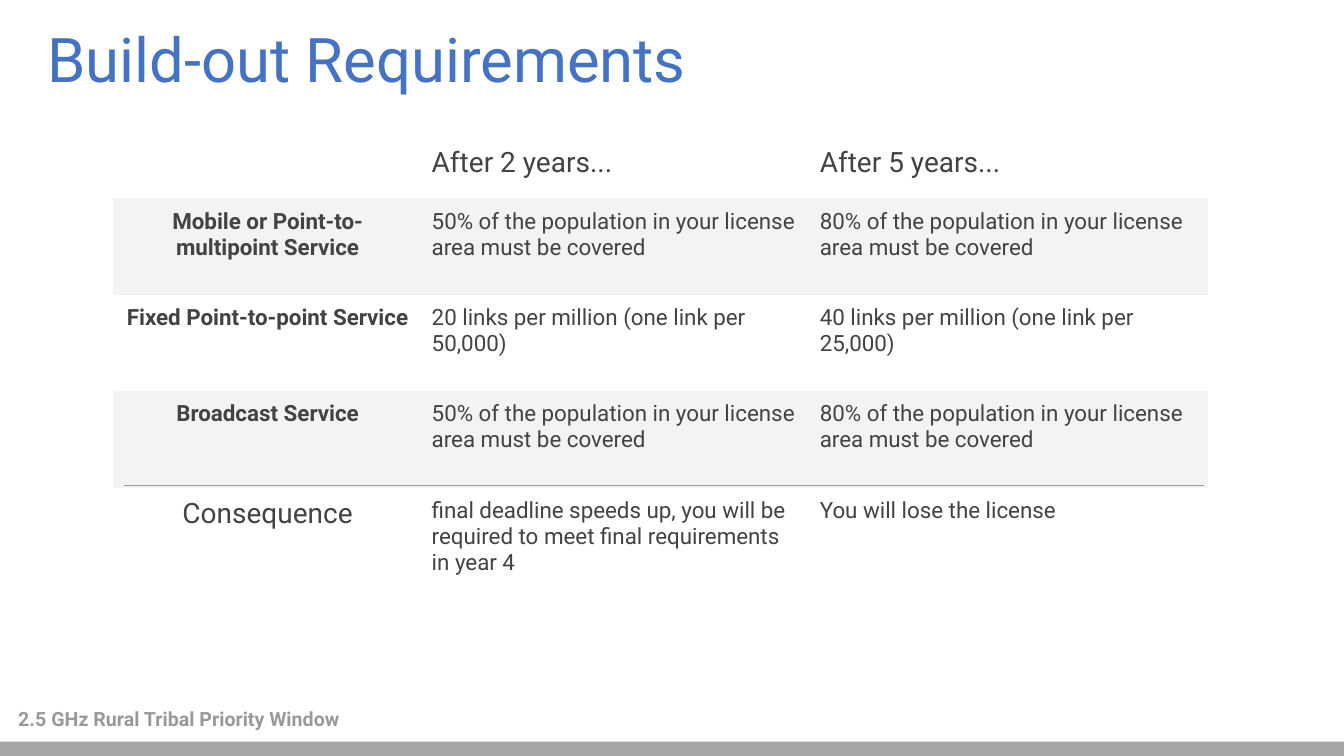
from lxml.etree import SubElement
from pptx import Presentation
from pptx.dml.color import RGBColor
from pptx.enum.shapes import MSO_CONNECTOR, MSO_SHAPE
from pptx.enum.text import MSO_ANCHOR, MSO_AUTO_SIZE, PP_ALIGN
from pptx.oxml.ns import qn
from pptx.util import Cm, Pt

COLORS = {
    "title": "4472C4",
    "text": "434343",
    "band": "F3F3F3",
    "muted": "999999",
    "bar": "A5A5A5",
}
FONT = "Roboto"
PAD = Cm(0.25)
PLAIN = "{2D5ABB26-0587-4C30-8999-92F81FD0307C}"
WIDTHS = (7.77, 9.78, 10.03)
HEIGHTS = (1.55, 2.43, 2.43, 2.43, 3.3)
COVER = "{}% of the population in your license area must be covered"
LINKS = "{} links per million (one link per {})"
ROWS = (
    ("", "After 2 years...", "After 5 years..."),
    ("Mobile or Point-to-multipoint Service", COVER.format(50), COVER.format(80)),
    ("Fixed Point-to-point Service", LINKS.format(20, "50,000"), LINKS.format(40, "25,000")),
    ("Broadcast Service", COVER.format(50), COVER.format(80)),
    (
        "Consequence",
        "final deadline speeds up, you will be required to meet final requirements in year 4",
        "You will lose the license",
    ),
)


def color(name):
    return RGBColor.from_string(COLORS[name])


def style(para, size, name, bold=False, align=PP_ALIGN.LEFT):
    para.alignment = align
    font = para.font
    font.name = FONT
    font.size = Pt(size)
    font.bold = bold
    font.color.rgb = color(name)


def pad(box):
    box.margin_left = box.margin_right = PAD
    box.margin_top = box.margin_bottom = PAD


def set_frame(shape, text):
    frame = shape.text_frame
    frame.text = text
    frame.word_wrap = True
    frame.auto_size = MSO_AUTO_SIZE.NONE
    frame.vertical_anchor = MSO_ANCHOR.TOP
    pad(frame)
    return frame.paragraphs[0]


def add_title(slide, text):
    title = slide.shapes.title
    title.left, title.top = Cm(0.94), Cm(0.48)
    title.width, title.height = Cm(31.55), Cm(1.42)
    para = set_frame(title, text)
    para.line_spacing = 0.9
    style(para, 44, "title")


def add_bar(slide):
    bar = slide.shapes.add_shape(
        MSO_SHAPE.RECTANGLE, Cm(0), Cm(18.69), Cm(33.87), Cm(0.36)
    )
    bar.shadow.inherit = False
    bar.fill.solid()
    bar.fill.fore_color.rgb = color("bar")
    bar.line.fill.background()


def add_label(slide, text):
    box = slide.shapes.add_textbox(Cm(0), Cm(17.48), Cm(9.3), Cm(1.17))
    para = set_frame(box, text)
    para._p.get_or_add_pPr().set("marL", str(Cm(0.21)))
    para.line_spacing = 1.15
    para.space_after = Pt(10)
    style(para, 14, "muted", bold=True)


def fill_cell(cell, text, row, col):
    cell.text = text
    pad(cell)
    band = row in (1, 3)
    if band:
        cell.fill.solid()
        cell.fill.fore_color.rgb = color("band")
    else:
        cell.fill.background()
    last = len(ROWS) - 1
    large = row == 0 or (row == last and col == 0)
    bold = col == 0 and 0 < row < last
    align = PP_ALIGN.CENTER if col == 0 else PP_ALIGN.LEFT
    style(cell.text_frame.paragraphs[0], 20 if large else 16, "text", bold, align)


def add_grid(slide):
    frame = slide.shapes.add_table(
        len(ROWS), len(WIDTHS), Cm(2.86), Cm(3.45), Cm(sum(WIDTHS)), Cm(sum(HEIGHTS))
    )
    table = frame.table
    table.first_row = table.horz_banding = False
    table._tbl.tblPr.find(qn("a:tableStyleId")).text = PLAIN
    for column, width in zip(table.columns, WIDTHS):
        column.width = Cm(width)
    for line, height in zip(table.rows, HEIGHTS):
        line.height = Cm(height)
    for row, texts in enumerate(ROWS):
        for col, text in enumerate(texts):
            fill_cell(table.cell(row, col), text, row, col)


def add_rule(slide):
    rule = slide.shapes.add_connector(
        MSO_CONNECTOR.STRAIGHT, Cm(3.13), Cm(12.24), Cm(30.33), Cm(12.24)
    )
    rule.line.color.rgb = color("muted")
    rule.line.width = Pt(0.75)
    SubElement(rule._element.spPr, qn("a:effectLst"))


def main():
    deck = Presentation()
    deck.slide_width, deck.slide_height = Cm(33.87), Cm(19.05)
    slide = deck.slides.add_slide(deck.slide_layouts[5])
    add_bar(slide)
    add_title(slide, "Build-out Requirements")
    add_label(slide, "2.5 GHz Rural Tribal Priority Window")
    add_grid(slide)
    add_rule(slide)
    deck.save("out.pptx")


if __name__ == "__main__":
    main()
